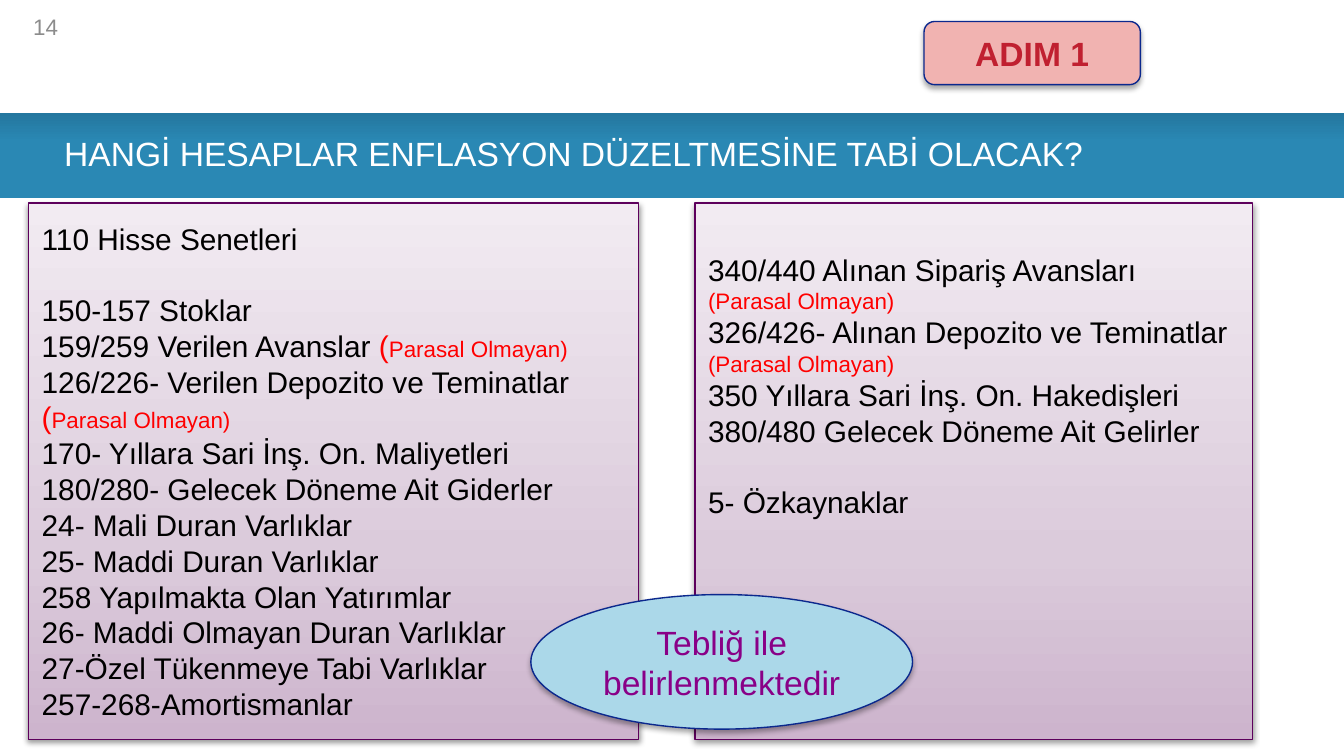
from dataclasses import dataclass
from typing import NamedTuple

from lxml.etree import SubElement
from pptx import Presentation
from pptx.dml.color import RGBColor
from pptx.enum.shapes import MSO_SHAPE as Preset
from pptx.enum.text import MSO_ANCHOR as Anchor, PP_ALIGN as Align
from pptx.oxml.ns import qn
from pptx.util import Inches, Pt

WIDTH = Inches(10)
HEIGHT = WIDTH * 9 // 16
BLACK, RED, NAVY, PLUM = "000000", "FF0000", "0B288D", "5D005C"
PANEL_STOPS = ((0, "CDB4CD"), (35, "DBCBDB"), (100, "F2EBF2"))
BAND_STOPS = ((0, "24779F"), (34, "2A88B4"))
PANEL_TOP, PANEL_HEIGHT = 26.85, 71


class Frame(NamedTuple):
    """Position and size in percent of the slide."""
    left: float
    top: float
    width: float
    height: float


class Run(NamedTuple):
    """A stretch of text with one format."""
    text: str
    size: float = 16
    color: str = BLACK
    bold: bool = False


class Line(NamedTuple):
    """A paragraph and the gap above it."""
    runs: tuple[Run, ...]
    before: float = 0


@dataclass
class Panel:
    """A column of account names."""
    left: float
    width: float
    inset: float
    lines: list[Line]


@dataclass
class Badge:
    """A filled, outlined shape with a centred label."""
    preset: Preset
    frame: Frame
    fill: str
    label: Run


def account(text: str, *notes: Run, before: float = 0) -> Line:
    """Make an account line, followed by any notes."""
    return Line((Run(text), *notes), before)


NOTE = Run("(Parasal Olmayan)", 12, RED)
SPLIT_NOTE = (Run("(", 16, RED), Run("Parasal Olmayan)", 12, RED))

PANELS = [
    Panel(2.12, 45.4, 0.13, [
        account("110 Hisse Senetleri"),
        account("150-157 Stoklar", before=19),
        account("159/259 Verilen Avanslar ", *SPLIT_NOTE),
        account("126/226- Verilen Depozito ve Teminatlar ", *SPLIT_NOTE),
        account("170- Yıllara Sari İnş. On. Maliyetleri"),
        account("180/280- Gelecek Döneme Ait Giderler"),
        account("24- Mali Duran Varlıklar"),
        account("25- Maddi Duran Varlıklar"),
        account("258 Yapılmakta Olan Yatırımlar"),
        account("26- Maddi Olmayan Duran Varlıklar"),
        account("27-Özel Tükenmeye Tabi Varlıklar"),
        account("257-268-Amortismanlar"),
    ]),
    Panel(51.7, 41.5, 0.36, [
        account("340/440 Alınan Sipariş Avansları"),
        Line((NOTE,)),
        account("326/426- Alınan Depozito ve Teminatlar ", NOTE),
        account("350 Yıllara Sari İnş. On. Hakedişleri"),
        account("380/480 Gelecek Döneme Ait Gelirler"),
        account("5- Özkaynaklar", before=19),
    ]),
]
BADGES = [
    Badge(Preset.ROUNDED_RECTANGLE, Frame(68.75, 2.85, 16.1, 8.36), "F1B3B1",
          Run("ADIM 1", 18, "C02030", True)),
    Badge(Preset.OVAL, Frame(39.5, 78.65, 28.4, 17.8), "ABD8E9",
          Run("Tebliğ ile belirlenmektedir", 18, "890087")),
]


def rgb(value: str) -> RGBColor:
    """Turn a hex string into a colour."""
    return RGBColor.from_string(value)


def place(frame: Frame) -> tuple[int, int, int, int]:
    """Turn shares of the slide into lengths."""
    return (int(WIDTH * frame.left / 100), int(HEIGHT * frame.top / 100),
            int(WIDTH * frame.width / 100), int(HEIGHT * frame.height / 100))


def write(shape, lines: list[Line], align=Align.LEFT, anchor=Anchor.MIDDLE) -> None:
    """Fill a shape with formatted lines."""
    text_frame = shape.text_frame
    text_frame.word_wrap = True
    text_frame.vertical_anchor = anchor
    for index, line in enumerate(lines):
        paragraph = text_frame.paragraphs[0] if index == 0 else text_frame.add_paragraph()
        paragraph.alignment = align
        paragraph.space_before = Pt(line.before)
        for part in line.runs:
            run = paragraph.add_run()
            run.text = part.text
            run.font.name = "Arial"
            run.font.size = Pt(part.size)
            run.font.bold = part.bold
            run.font.color.rgb = rgb(part.color)


def add_solid(slide, preset, frame: Frame, line: str | None = None):
    """Add a preset shape without shadow, outlined if a colour is given."""
    shape = slide.shapes.add_shape(preset, *place(frame))
    shape.shadow.inherit = False
    if line:
        shape.line.color.rgb = rgb(line)
        shape.line.width = Pt(0.75)
    else:
        shape.line.fill.background()
    return shape


def set_gradient(shape, stops, angle: int) -> None:
    """Give a shape a linear gradient, clockwise angle in degrees."""
    shape.fill.gradient()
    gradient = shape.element.spPr.find(qn("a:gradFill"))
    for child in list(gradient):
        gradient.remove(child)
    stop_list = SubElement(gradient, qn("a:gsLst"))
    for position, color in stops:
        stop = SubElement(stop_list, qn("a:gs"), pos=str(position * 1000))
        SubElement(stop, qn("a:srgbClr"), val=color)
    SubElement(gradient, qn("a:lin"), ang=str(angle * 60000), scaled="0")


def set_shadow(shape, opacity: int, distance: float) -> None:
    """Cast a soft black shadow downwards."""
    effects = shape.element.spPr.find(qn("a:effectLst"))
    shadow = SubElement(effects, qn("a:outerShdw"), blurRad=str(Pt(3.1)),
                        dist=str(Pt(distance)), dir="5400000", rotWithShape="0")
    color = SubElement(shadow, qn("a:srgbClr"), val=BLACK)
    SubElement(color, qn("a:alpha"), val=str(opacity * 1000))


def add_label(slide, frame: Frame, run: Run, align=Align.LEFT) -> None:
    """Add a one-line text box."""
    write(slide.shapes.add_textbox(*place(frame)), [Line((run,))], align)


def add_panel(slide, panel: Panel) -> None:
    """Add a shaded column of accounts."""
    frame = Frame(panel.left, PANEL_TOP, panel.width, PANEL_HEIGHT)
    shape = add_solid(slide, Preset.RECTANGLE, frame, PLUM)
    set_gradient(shape, PANEL_STOPS, 270)
    set_shadow(shape, 38, 1.6)
    shape.text_frame.margin_top = Inches(panel.inset)
    write(shape, panel.lines, anchor=Anchor.TOP)


def add_badge(slide, badge: Badge) -> None:
    """Add a badge with its label."""
    shape = add_solid(slide, badge.preset, badge.frame, NAVY)
    shape.fill.solid()
    shape.fill.fore_color.rgb = rgb(badge.fill)
    set_shadow(shape, 35, 1.8)
    write(shape, [Line((badge.label,))], Align.CENTER)


def main() -> None:
    """Build the slide and save it."""
    presentation = Presentation()
    presentation.slide_width, presentation.slide_height = WIDTH, HEIGHT
    slide = presentation.slides.add_slide(presentation.slide_layouts[6])
    band = add_solid(slide, Preset.RECTANGLE, Frame(0, 15, 100, 11.2))
    set_gradient(band, BAND_STOPS, 90)
    add_label(slide, Frame(3.8, 15.5, 90, 9.4),
              Run("HANGİ HESAPLAR ENFLASYON DÜZELTMESİNE TABİ OLACAK?", 18, "FFFFFF"))
    for panel in PANELS:
        add_panel(slide, panel)
    add_label(slide, Frame(0.4, 0.8, 4.9, 5.3), Run("14", 12, "8C8C8C"), Align.RIGHT)
    for badge in BADGES:
        add_badge(slide, badge)
    presentation.save("out.pptx")


if __name__ == "__main__":
    main()
